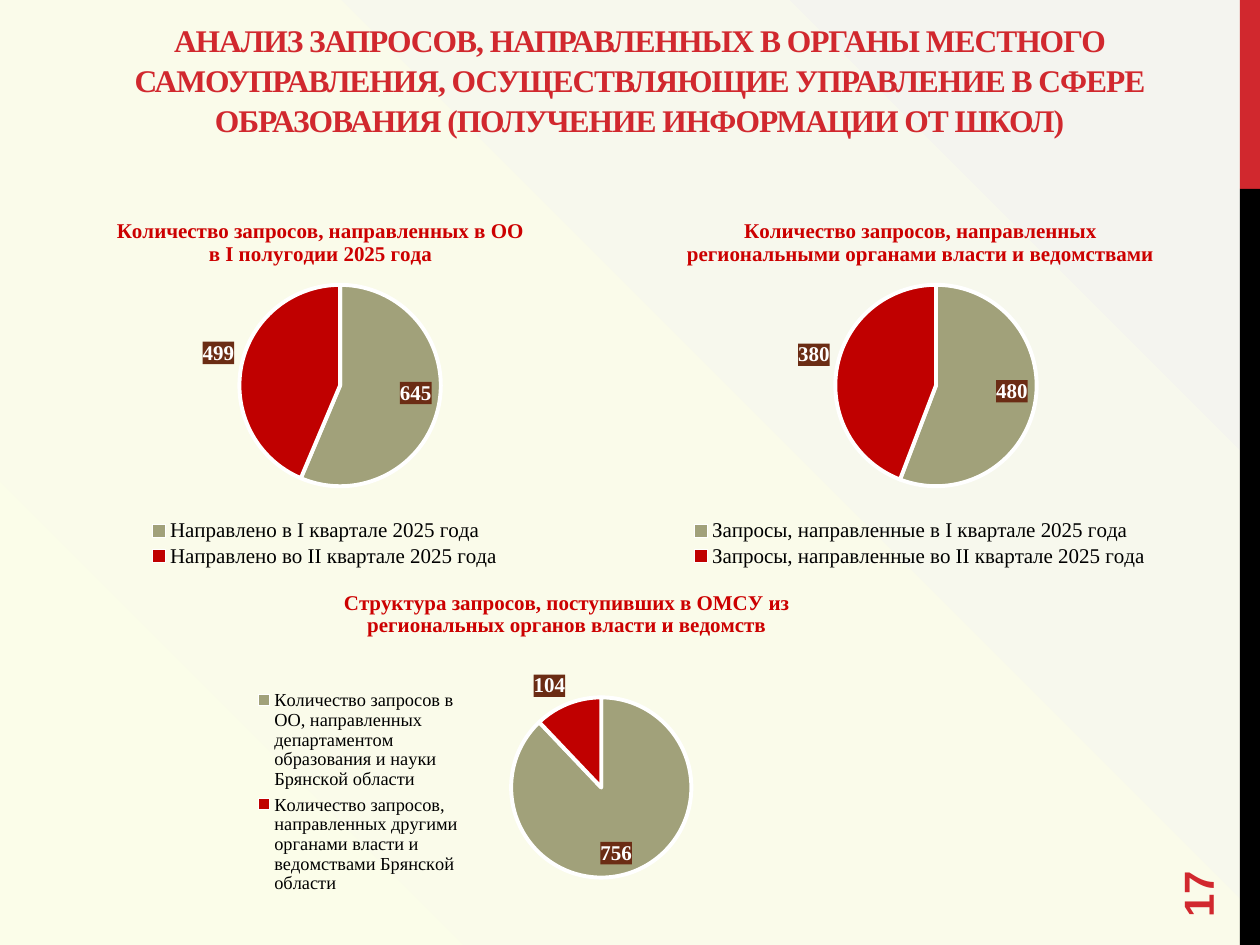
from lxml import etree
from pptx import Presentation
from pptx.chart.data import CategoryChartData
from pptx.dml.color import RGBColor
from pptx.enum.chart import XL_CHART_TYPE, XL_LABEL_POSITION, XL_LEGEND_POSITION
from pptx.enum.shapes import MSO_SHAPE
from pptx.enum.text import MSO_ANCHOR, MSO_AUTO_SIZE, PP_ALIGN
from pptx.oxml import parse_xml
from pptx.oxml.ns import nsdecls, qn
from pptx.util import Inches, Pt

SERIF, SANS = "Times New Roman", "Arial"
RED, TITLE_RED, LABEL_BROWN = "D1282E", "CC0000", "6B2C14"
SLICES = ["A1A17A", "C00000"]
BACKGROUND = [(0, "FDFFE7"), (21, "FBFDE9"), (38, "FAFBEA"), (99, "F4F4EF")]
BAR_LEFT, BAR_SPLIT = 9.84, 1.5

TITLE = ("АНАЛИЗ ЗАПРОСОВ, НАПРАВЛЕННЫХ В ОРГАНЫ МЕСТНОГО САМОУПРАВЛЕНИЯ, "
         "ОСУЩЕСТВЛЯЮЩИЕ УПРАВЛЕНИЕ В СФЕРЕ ОБРАЗОВАНИЯ "
         "(ПОЛУЧЕНИЕ ИНФОРМАЦИИ ОТ ШКОЛ)")

# Boxes are left, top, width, height in slide inches; pie is centre x, y, diameter.
CHARTS = [
    dict(title="Структура запросов, поступивших в ОМСУ из региональных органов власти и ведомств",
         data={"Количество запросов в ОО, направленных департаментом образования "
               "и науки Брянской области": 756,
               "Количество запросов, направленных другими органами власти и "
               "ведомствами Брянской области": 104},
         box=(1.85, 4.5, 5.28, 3), pie=(4.77, 6.25, 1.43), title_at=(2.7, 4.65),
         legend=(1.98, 5.44, 1.72, 1.7), side=XL_LEGEND_POSITION.LEFT, legend_size=10.5),
    dict(title="Количество запросов, направленных в ОО\nв I полугодии 2025 года",
         data={"Направлено в I квартале 2025 года": 645,
               "Направлено во II квартале 2025 года": 499},
         box=(-0.28, 1.55, 5.66, 3), pie=(2.7, 3.06, 1.6), title_at=(0.9, 1.7),
         legend=(1.13, 4.1, 2.9, 0.43), side=XL_LEGEND_POSITION.BOTTOM, legend_size=12),
    dict(title="Количество запросов, направленных региональными органами власти и ведомствами",
         data={"Запросы, направленные в I квартале 2025 года": 480,
               "Запросы, направленные во II квартале 2025 года": 380},
         box=(4.83, 1.55, 4.89, 3), pie=(7.43, 3.06, 1.6), title_at=(5.42, 1.7),
         legend=(5.44, 4.1, 3.72, 0.43), side=XL_LEGEND_POSITION.BOTTOM, legend_size=12),
]


def rgb(color):
    return RGBColor.from_string(color)


def style(font, size, color, name=SERIF, bold=False):
    font.size, font.name, font.bold = Pt(size), name, bold
    font.color.rgb = rgb(color)


def write(tf, text, align=PP_ALIGN.LEFT, anchor=MSO_ANCHOR.MIDDLE, **fmt):
    tf.word_wrap, tf.auto_size = True, MSO_AUTO_SIZE.NONE
    tf.vertical_anchor = anchor
    p = tf.paragraphs[0]
    p.alignment = align
    r = p.add_run()
    r.text = text
    style(r.font, **fmt)
    return r


def set_background(slide):
    """Radial gradient centred on the bottom left corner."""
    slide.background.fill.gradient()
    grad = slide.background._cSld.find(".//" + qn("a:gradFill"))
    stops = "".join(f'<a:gs pos="{pos * 1000}"><a:srgbClr val="{color}"/></a:gs>'
                    for pos, color in BACKGROUND)
    grad.getparent().replace(grad, parse_xml(
        f'<a:gradFill {nsdecls("a")} rotWithShape="1"><a:gsLst>{stops}</a:gsLst>'
        '<a:path path="circle"><a:fillToRect t="100000" r="100000"/></a:path></a:gradFill>'))


def place(parent, chart_box, part, after=None, inner=False):
    """Fix a chart part at a slide position given in inches."""
    old = parent.find(qn("c:layout"))
    if old is not None:
        parent.remove(old)
    layout = etree.Element(qn("c:layout"))
    manual = etree.SubElement(layout, qn("c:manualLayout"))
    left, top, width, height = chart_box
    shares = [(part[0] - left) / width, (part[1] - top) / height]
    shares += [n / total for n, total in zip(part[2:], (width, height))]
    values = [("layoutTarget", "inner")] if inner else []
    values += [("xMode", "edge"), ("yMode", "edge")]
    values += [(tag, f"{share:.3f}") for tag, share in zip("xywh", shares)]
    for tag, value in values:
        etree.SubElement(manual, qn("c:" + tag)).set("val", value)
    if after is None:
        parent.insert(0, layout)
    else:
        parent.find(qn(after)).addnext(layout)


def style_label(label, element, position):
    """Bold white value on a brown ground."""
    style(label.font, 12, "FFFFFF", bold=True)
    label.position = position
    element.find(qn("c:txPr")).addprevious(parse_xml(
        f'<c:spPr {nsdecls("c", "a")}><a:solidFill><a:srgbClr val="{LABEL_BROWN}"/>'
        '</a:solidFill></c:spPr>'))


def add_pie(slide, title, data, box, pie, title_at, legend, side, legend_size):
    chart_data = CategoryChartData()
    chart_data.categories = list(data)
    chart_data.add_series("Series 1", list(data.values()))
    chart = slide.shapes.add_chart(XL_CHART_TYPE.PIE, *map(Inches, box), chart_data).chart
    style(chart.font, 10, "000000", SANS)

    tf = chart.chart_title.text_frame
    tf.text = title
    for p in tf.paragraphs:
        for r in p.runs:
            style(r.font, 12, TITLE_RED, bold=True)
    chart.chart_title.include_in_layout = False
    place(chart.chart_title._element, box, title_at, after="c:tx")

    chart.has_legend = True
    chart.legend.position = side
    chart.legend.include_in_layout = False
    style(chart.legend.font, legend_size, "000000")
    place(chart.legend._element, box, legend, after="c:legendPos")

    x, y, size = pie
    plot = chart.plots[0]
    plot.vary_by_categories = True
    place(plot._element.getparent(), box, (x - size / 2, y - size / 2, size, size), inner=True)

    series = plot.series[0]
    for i, color in enumerate(SLICES):
        fmt = series.points[i].format
        fmt.fill.solid()
        fmt.fill.fore_color.rgb = rgb(color)
        fmt.line.color.rgb = rgb("FFFFFF")
        fmt.line.width = Pt(2.25)
    labels = series.data_labels
    labels.show_value = True
    style_label(labels, labels._element, XL_LABEL_POSITION.INSIDE_END)
    outer = series.points[1].data_label
    outer.position = XL_LABEL_POSITION.OUTSIDE_END
    style_label(outer, labels._element.find(qn("c:dLbl")), XL_LABEL_POSITION.OUTSIDE_END)


prs = Presentation()
prs.slide_width, prs.slide_height = Inches(10), Inches(7.5)
slide = prs.slides.add_slide(prs.slide_layouts[5])
set_background(slide)

for top, height, color in [(0, BAR_SPLIT, RED), (BAR_SPLIT, 7.5 - BAR_SPLIT, "000000")]:
    bar = slide.shapes.add_shape(MSO_SHAPE.RECTANGLE, Inches(BAR_LEFT), Inches(top),
                                 Inches(10 - BAR_LEFT), Inches(height))
    bar.shadow.inherit = False
    bar.fill.solid()
    bar.fill.fore_color.rgb = rgb(color)
    bar.line.fill.background()

heading = slide.shapes.title
heading.left, heading.top, heading.width, heading.height = map(Inches, (0.5, 0.17, 9.15, 0.98))
r = write(heading.text_frame, TITLE, PP_ALIGN.CENTER, MSO_ANCHOR.BOTTOM,
          size=18, color=RED, bold=True)
r._r.get_or_add_rPr().set("spc", "-60")
heading.text_frame.paragraphs[0].line_spacing = 1.05

number = slide.shapes.add_textbox(*map(Inches, (8.78, 6.46, 1.44, 0.4)))
number.rotation = 270
write(number.text_frame, "17", size=24, color=RED, name=SANS, bold=True)

for chart in CHARTS:
    add_pie(slide, **chart)

prs.save("out.pptx")
